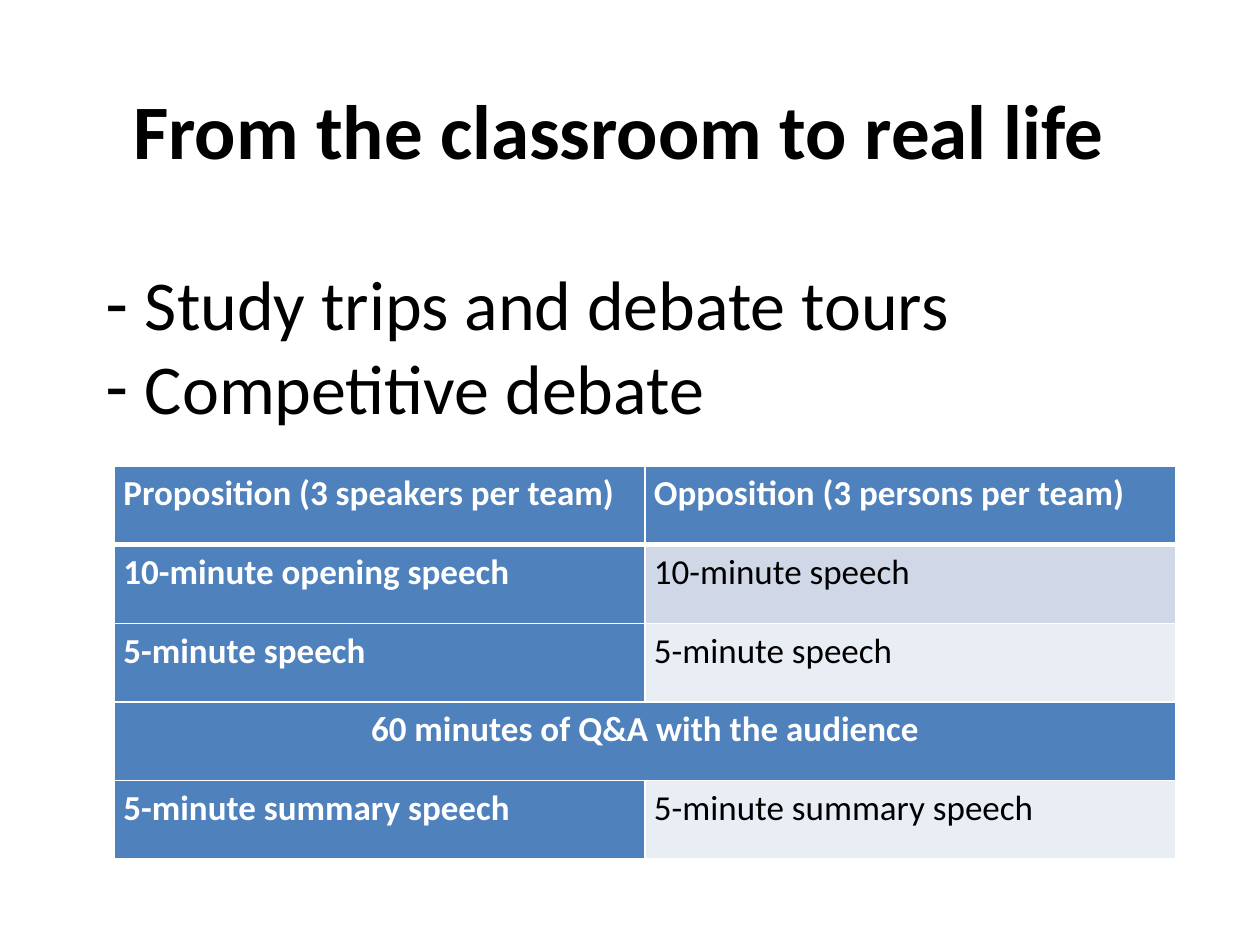
from dataclasses import dataclass

from lxml import etree
from pptx import Presentation
from pptx.dml.color import RGBColor
from pptx.enum.text import MSO_ANCHOR, MSO_AUTO_SIZE, PP_ALIGN
from pptx.oxml.ns import qn
from pptx.util import Inches, Pt

LEFT, CENTER = PP_ALIGN.LEFT, PP_ALIGN.CENTER
TOP = MSO_ANCHOR.TOP
NO_AUTOFIT = MSO_AUTO_SIZE.NONE
TITLE_AND_CONTENT = 1


@dataclass(frozen=True)
class Theme:
    font: str = "Calibri"
    black: str = "000000"
    white: str = "FFFFFF"
    blue: str = "4F81BD"
    band_dark: str = "D0D8E8"
    band_light: str = "E9EDF4"
    title_size: int = 44
    list_size: int = 40
    table_size: int = 20
    thin_line: int = 1
    header_line: int = 3


@dataclass(frozen=True)
class Area:
    left: float
    top: float
    width: float
    height: float


@dataclass(frozen=True)
class DebateRow:
    proposition: str
    opposition: str = ""
    opposition_fill: str = ""


THEME = Theme()
TITLE_AREA = Area(0.74, 0.6, 8.35, 0.85)
LIST_AREA = Area(0.74, 2.02, 8.35, 1.46)
TABLE_AREA = Area(0.91, 3.7, 8.42, 3.12)
TITLE = "From the classroom to real life"
ACTIVITIES = ["Study trips and debate tours", "Competitive debate"]
DEBATE_ROWS = [
    DebateRow("Proposition (3 speakers per team)", "Opposition (3 persons per team)", THEME.blue),
    DebateRow("10-minute opening speech", "10-minute speech", THEME.band_dark),
    DebateRow("5-minute speech", "5-minute speech", THEME.band_light),
    DebateRow("60 minutes of Q&A with the audience"),
    DebateRow("5-minute summary speech", "5-minute summary speech", THEME.band_light),
]


def place(shape, area: Area) -> None:
    shape.left, shape.top = Inches(area.left), Inches(area.top)
    shape.width, shape.height = Inches(area.width), Inches(area.height)


def format_para(para, size: int, color: str, bold: bool, align=LEFT) -> None:
    para.alignment = align
    para.font.name = THEME.font
    para.font.size = Pt(size)
    para.font.bold = bold
    para.font.color.rgb = RGBColor.from_string(color)


def add_dash(para) -> None:
    properties = para._p.get_or_add_pPr()
    properties.set("marL", str(Inches(0.31)))
    properties.set("indent", str(Inches(-0.31)))
    etree.SubElement(properties, qn("a:buChar"), char="-")


def fill_title(box) -> None:
    place(box, TITLE_AREA)
    frame = box.text_frame
    frame.text = TITLE
    frame.auto_size = NO_AUTOFIT
    format_para(frame.paragraphs[0], THEME.title_size, THEME.black, True, CENTER)


def fill_list(box) -> None:
    place(box, LIST_AREA)
    frame = box.text_frame
    frame.text = "\n".join(ACTIVITIES)
    frame.auto_size = NO_AUTOFIT
    frame.vertical_anchor = TOP
    for para in frame.paragraphs:
        para.space_before = Pt(0)
        add_dash(para)
        format_para(para, THEME.list_size, THEME.black, False)


def add_borders(cell, top: int, bottom: int) -> None:
    properties = cell._tc.get_or_add_tcPr()
    widths = {"lnL": THEME.thin_line, "lnR": THEME.thin_line, "lnT": top, "lnB": bottom}
    for side, width in widths.items():
        line = etree.SubElement(properties, qn(f"a:{side}"), w=str(Pt(width)))
        fill = etree.SubElement(line, qn("a:solidFill"))
        etree.SubElement(fill, qn("a:srgbClr"), val=THEME.white)


def format_cell(cell, text: str, fill: str, row_index: int, align=LEFT) -> None:
    top = THEME.header_line if row_index == 1 else THEME.thin_line
    bottom = THEME.header_line if row_index == 0 else THEME.thin_line
    add_borders(cell, top, bottom)
    cell.fill.solid()
    cell.fill.fore_color.rgb = RGBColor.from_string(fill)
    cell.margin_left = cell.margin_right = Inches(0.07)
    cell.margin_top = cell.margin_bottom = 0
    cell.text = text
    para = cell.text_frame.paragraphs[0]
    para.line_spacing = 1.15
    strong = fill == THEME.blue
    color = THEME.white if strong else THEME.black
    format_para(para, THEME.table_size, color, strong, align)


def add_debate_table(page) -> None:
    area = TABLE_AREA
    table = page.shapes.add_table(
        len(DEBATE_ROWS), 2,
        Inches(area.left), Inches(area.top), Inches(area.width), Inches(area.height),
    ).table
    for index, row in enumerate(DEBATE_ROWS):
        first, second = table.cell(index, 0), table.cell(index, 1)
        align = LEFT if row.opposition else CENTER
        format_cell(first, row.proposition, THEME.blue, index, align)
        format_cell(second, row.opposition, row.opposition_fill or THEME.blue, index)
        if not row.opposition:
            first.merge(second)


def main() -> None:
    deck = Presentation()
    deck.slide_width, deck.slide_height = Inches(10), Inches(7.5)
    page = deck.slides.add_slide(deck.slide_layouts[TITLE_AND_CONTENT])
    fill_title(page.shapes.title)
    fill_list(page.placeholders[1])
    add_debate_table(page)
    deck.save("out.pptx")


if __name__ == "__main__":
    main()
